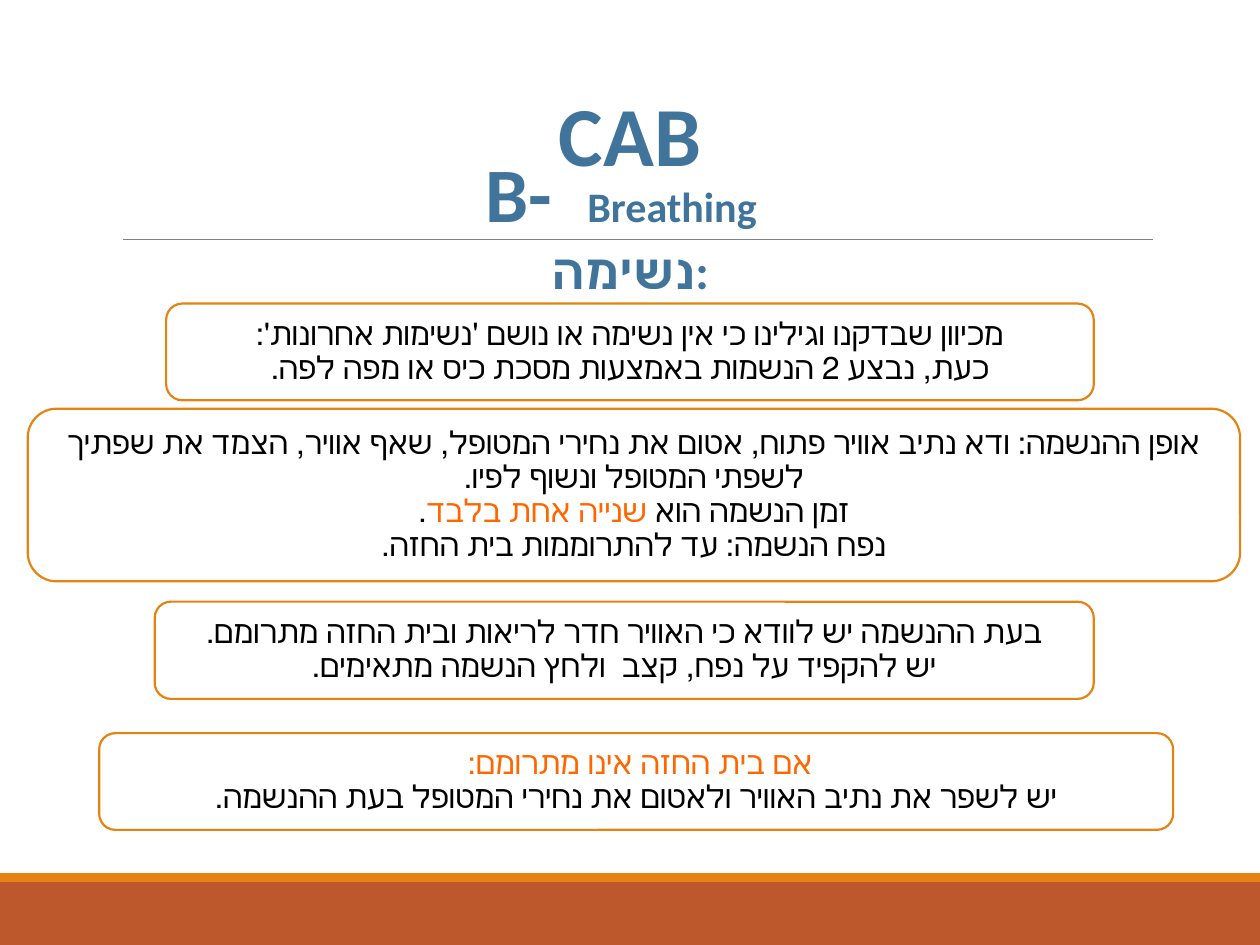
from pptx import Presentation
from pptx.dml.color import RGBColor
from pptx.enum.shapes import MSO_CONNECTOR as CONNECTOR, MSO_SHAPE as SHAPE
from pptx.enum.text import MSO_ANCHOR as ANCHOR, MSO_AUTO_SIZE as AUTO_SIZE, PP_ALIGN as ALIGN
from pptx.oxml.ns import qn
from pptx.util import Cm, Pt
from lxml import etree

WHITE = RGBColor(0xFF, 0xFF, 0xFF)
BLACK = RGBColor(0x00, 0x00, 0x00)
BLUE = RGBColor(0x40, 0x74, 0x9B)
GRAY = RGBColor(0x80, 0x80, 0x80)
ORANGE = RGBColor(0xE4, 0x83, 0x12)
RUST = RGBColor(0xBD, 0x58, 0x2C)
HIGHLIGHT = RGBColor(0xFF, 0x66, 0x00)
FONT = "Calibri"
WIDTH, HEIGHT = 25.4, 19.05

# Each step: box (left, top, width, height in cm) and its lines of (text, colour) parts
STEPS = [
    ((3.35, 6.12, 18.7, 1.95), [
        [("מכיוון שבדקנו וגילינו כי אין נשימה או נושם 'נשימות אחרונות':", BLACK)],
        [("כעת, נבצע 2 הנשמות באמצעות מסכת כיס או מפה לפה.", BLACK)],
    ]),
    ((0.56, 8.24, 24.44, 3.48), [
        [("אופן ההנשמה: ודא נתיב אוויר פתוח, אטום את נחירי המטופל, שאף אוויר, "
          "הצמד את שפתיך לשפתי המטופל ונשוף לפיו.", BLACK)],
        [("זמן הנשמה הוא ", BLACK), ("שנייה אחת בלבד", HIGHLIGHT), (".", BLACK)],
        [("נפח הנשמה: עד להתרוממות בית החזה.", BLACK)],
    ]),
    ((3.12, 12.13, 18.93, 1.96), [
        [("בעת ההנשמה יש לוודא כי האוויר חדר לריאות ובית החזה מתרומם.", BLACK)],
        [("יש להקפיד על נפח, קצב  ולחץ הנשמה מתאימים.", BLACK)],
    ]),
    ((2, 14.78, 21.65, 1.95), [
        [("אם בית החזה אינו מתרומם: ", HIGHLIGHT)],
        [("יש לשפר את נתיב האוויר ולאטום את נחירי המטופל בעת ההנשמה.", BLACK)],
    ]),
]


def to_cm(box):
    return [Cm(value) for value in box]


def format_paragraph(paragraph, size, color, bold=False, rtl=False):
    paragraph.alignment = ALIGN.CENTER
    font = paragraph.font
    font.name, font.size, font.bold = FONT, Pt(size), bold
    font.color.rgb = color
    if rtl:
        paragraph._p.get_or_add_pPr().set("rtl", "1")


def add_band(slide, box, color):
    band = slide.shapes.add_shape(SHAPE.RECTANGLE, *to_cm(box))
    band.shadow.inherit = False
    band.fill.solid()
    band.fill.fore_color.rgb = color
    band.line.fill.background()


def add_rule(slide, left, right, top):
    rule = slide.shapes.add_connector(CONNECTOR.STRAIGHT, Cm(left), Cm(top), Cm(right), Cm(top))
    rule.line.color.rgb = GRAY
    rule.line.width = Pt(0.5)
    etree.SubElement(rule._element.spPr, qn("a:effectLst"))


def set_title(slide, box, text):
    title = slide.shapes.title
    title.left, title.top, title.width, title.height = to_cm(box)
    frame = title.text_frame
    frame.text = text
    frame.auto_size = AUTO_SIZE.NONE
    frame.vertical_anchor = ANCHOR.BOTTOM
    format_paragraph(frame.paragraphs[0], 48, BLUE, bold=True, rtl=True)
    frame.paragraphs[0].line_spacing = 0.85


def add_heading(slide, box, parts):
    """Adds a bold centred line made of (text, size) parts."""
    frame = slide.shapes.add_textbox(*to_cm(box)).text_frame
    frame.word_wrap = True
    paragraph = frame.paragraphs[0]
    format_paragraph(paragraph, parts[0][1], BLUE, bold=True)
    # Hebrew letters take the complex-script font
    etree.SubElement(paragraph.font._element, qn("a:cs"), typeface=FONT)
    for text, size in parts:
        run = paragraph.add_run()
        run.text = text
        run.font.size = Pt(size)


def add_step(slide, box, lines):
    step = slide.shapes.add_shape(SHAPE.ROUNDED_RECTANGLE, *to_cm(box))
    step.shadow.inherit = False
    step.fill.solid()
    step.fill.fore_color.rgb = WHITE
    step.line.color.rgb = ORANGE
    step.line.width = Pt(1.25)

    frame = step.text_frame
    frame.word_wrap = True
    frame.vertical_anchor = ANCHOR.MIDDLE
    frame.margin_left = frame.margin_right = Cm(0.18)
    frame.margin_top = frame.margin_bottom = Cm(0.18)
    paragraph = frame.paragraphs[0]
    format_paragraph(paragraph, 18, BLACK, rtl=True)
    paragraph.line_spacing = 0.9
    for index, parts in enumerate(lines):
        if index:
            paragraph.add_line_break()
        for text, color in parts:
            run = paragraph.add_run()
            run.text = text
            run.font.color.rgb = color


def main():
    presentation = Presentation()
    presentation.slide_width, presentation.slide_height = Cm(WIDTH), Cm(HEIGHT)
    slide = presentation.slides.add_slide(presentation.slide_layouts[5])

    # Footer bands and the rule under the title
    add_band(slide, (0, 17.78, WIDTH, 1.27), RUST)
    add_band(slide, (0, 17.6, WIDTH, 0.18), ORANGE)
    add_rule(slide, 2.48, 23.24, 4.83)

    # Title and headings
    set_title(slide, (2.22, 1.04, 20.96, 2.79), "CAB")
    add_heading(slide, (5.7, 2.81, 14, 2.13), [("B-  ", 44), ("Breathing", 24), (" ", 44)])
    add_heading(slide, (3.8, 4.73, 17.81, 1.45), [("נשימה:", 28)])

    # Breathing steps
    for box, lines in STEPS:
        add_step(slide, box, lines)

    presentation.save("out.pptx")


if __name__ == "__main__":
    main()
